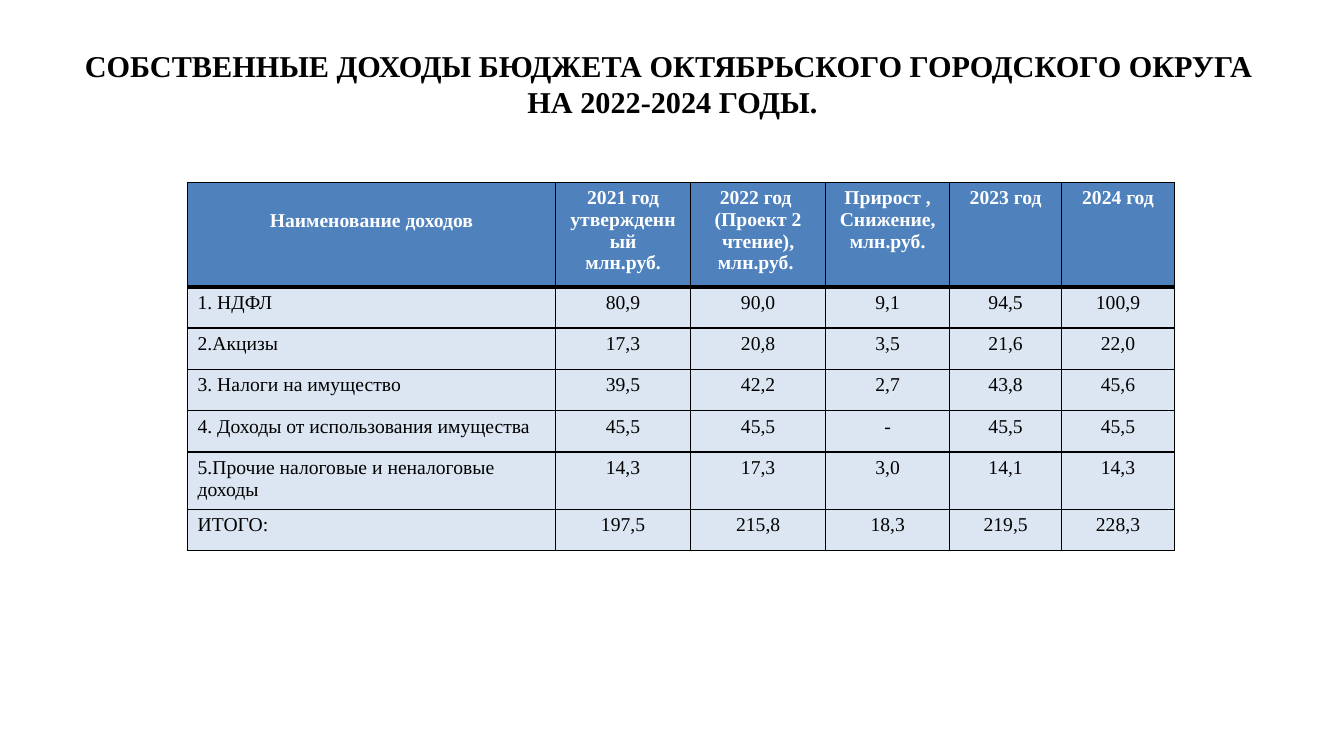
from lxml.etree import SubElement
from pptx import Presentation
from pptx.dml.color import RGBColor
from pptx.enum.text import MSO_ANCHOR as Anchor, PP_ALIGN as Align
from pptx.oxml.ns import qn
from pptx.util import Inches, Pt

TITLE = "СОБСТВЕННЫЕ ДОХОДЫ БЮДЖЕТА ОКТЯБРЬСКОГО ГОРОДСКОГО ОКРУГА \vНА 2022-2024 ГОДЫ."
HEADINGS = [
    "Наименование доходов",
    "2021 год утвержденный\nмлн.руб.",
    "2022 год \n(Проект 2 чтение), млн.руб. ",
    "Прирост ,\nСнижение, млн.руб.",
    "2023 год",
    "2024 год",
]
INCOMES = [
    ("1. НДФЛ", "80,9", "90,0", "9,1", "94,5", "100,9"),
    ("2.Акцизы", "17,3", "20,8", "3,5", "21,6", "22,0"),
    ("3. Налоги на имущество", "39,5", "42,2", "2,7", "43,8", "45,6"),
    ("4. Доходы от использования имущества", "45,5", "45,5", "-", "45,5", "45,5"),
    ("5.Прочие налоговые и неналоговые доходы", "14,3", "17,3", "3,0", "14,1", "14,3"),
    ("ИТОГО:", "197,5", "215,8", "18,3", "219,5", "228,3"),
]
COLUMN_WIDTHS = [3.65, 1.34, 1.34, 1.23, 1.11, 1.12]
ROW_HEIGHTS = [0.87, 0.41, 0.41, 0.41, 0.41, 0.57, 0.41]
FONT = "Times New Roman"
BLACK, WHITE, BLUE, PALE = "000000", "FFFFFF", "4F81BD", "DCE6F2"


def color(code):
    return RGBColor.from_string(code)


def write(frame, text, size=14, ink=BLACK, bold=False, align=Align.CENTER):
    frame.word_wrap = True
    frame.text = text
    for para in frame.paragraphs:
        para.alignment = align
        for span in para.runs:
            span.font.name = FONT
            span.font.size = Pt(size)
            span.font.bold = bold
            span.font.color.rgb = color(ink)


def outline(cell, **widths):
    properties = cell._tc.get_or_add_tcPr()
    for side in "LRTB":
        line = SubElement(properties, qn(f"a:ln{side}"), w=str(Pt(widths.get(side, 1))))
        fill = SubElement(line, qn("a:solidFill"))
        SubElement(fill, qn("a:srgbClr"), val=BLACK)


deck = Presentation()
deck.slide_width, deck.slide_height = Inches(13.33), Inches(7.5)
page = deck.slides.add_slide(deck.slide_layouts[6])

box = page.shapes.add_textbox(Inches(0.67), Inches(0.3), Inches(12), Inches(1.05))
write(box.text_frame, TITLE, size=21.6, bold=True)
box.text_frame.vertical_anchor = Anchor.MIDDLE

table = page.shapes.add_table(
    len(ROW_HEIGHTS), len(COLUMN_WIDTHS), Inches(1.86), Inches(1.81),
    Inches(sum(COLUMN_WIDTHS)), Inches(sum(ROW_HEIGHTS)),
).table
for column, width in zip(table.columns, COLUMN_WIDTHS):
    column.width = Inches(width)
for row, height in zip(table.rows, ROW_HEIGHTS):
    row.height = Inches(height)

for row_index, values in enumerate([HEADINGS, *INCOMES]):
    heading = row_index == 0
    for column_index, value in enumerate(values):
        cell = table.cell(row_index, column_index)
        centered = heading or column_index > 0
        write(cell.text_frame, value, ink=WHITE if heading else BLACK, bold=heading,
              align=Align.CENTER if centered else Align.LEFT)
        outline(cell, T=3 if row_index == 1 else 1, B=3 if heading else 1)
        cell.fill.solid()
        cell.fill.fore_color.rgb = color(BLUE if heading else PALE)

table.cell(0, 0).margin_top = Inches(0.27)
deck.save("out.pptx")
